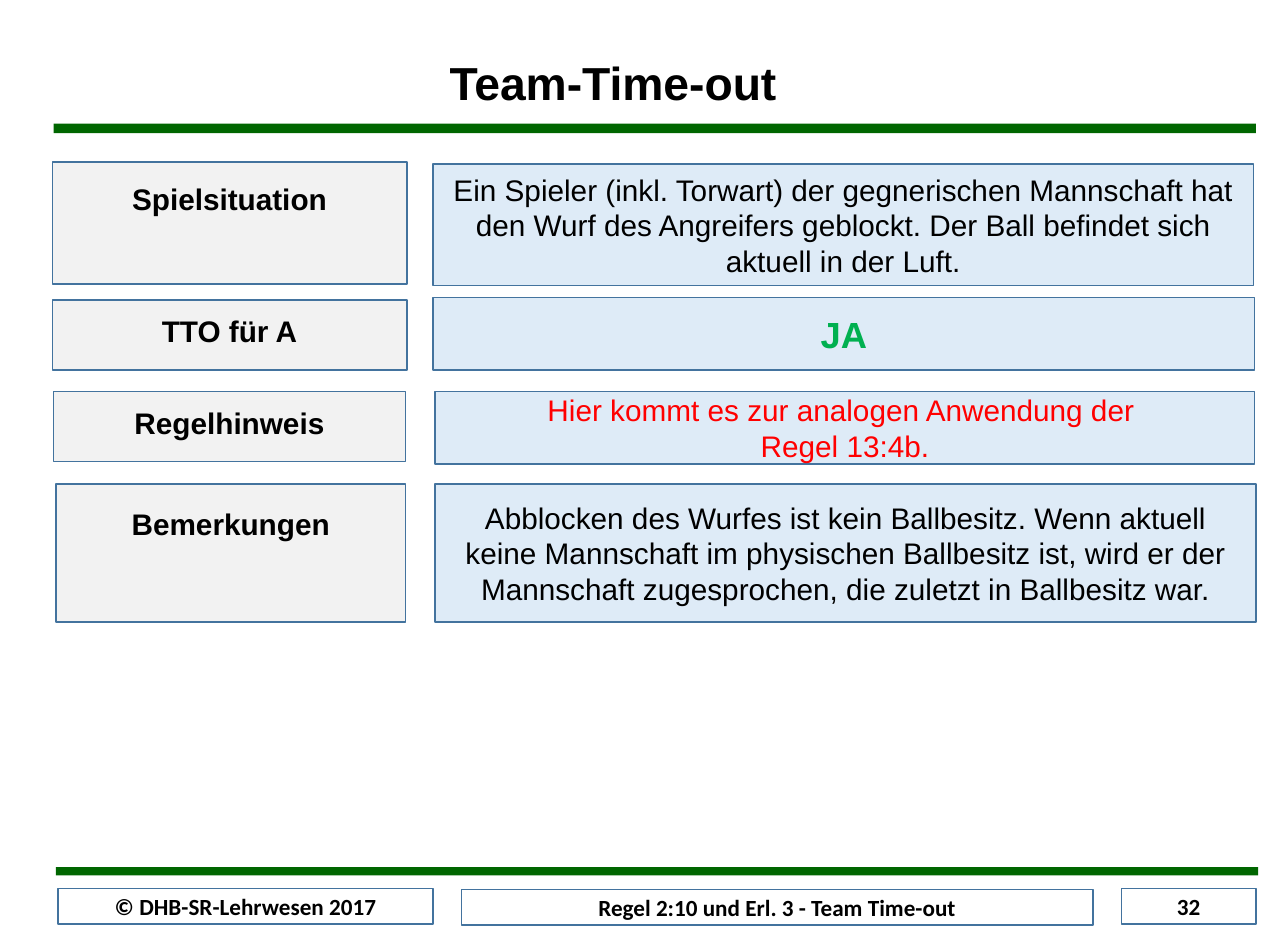
from dataclasses import dataclass

import pptx
import pptx.dml.color
import pptx.enum.shapes
import pptx.enum.text
import pptx.util

PX_PER_INCH = 100
EMU_PER_PX = 914400 // PX_PER_INCH

COLORS = {
    "bar": "006600",
    "border": "43739E",
    "label": "F2F2F2",
    "answer": "DEEBF7",
    "footer": "FFFFFF",
    "text": "000000",
    "yes": "00B050",
    "rule": "FF0000",
}
ANCHOR = pptx.enum.text.MSO_ANCHOR
ALIGN = pptx.enum.text.PP_ALIGN


@dataclass(frozen=True)
class Area:
    left: int
    top: int
    width: int
    height: int


@dataclass(frozen=True)
class Box:
    area: Area
    fill: str
    lines: tuple[str, ...]
    size: int = 18
    font: str = "Arial"
    color: str = "text"
    bold: bool = False
    top_inset: int | None = None


def px(length: int) -> pptx.util.Emu:
    return pptx.util.Emu(length * EMU_PER_PX)


def rgb(name: str) -> pptx.dml.color.RGBColor:
    return pptx.dml.color.RGBColor.from_string(COLORS[name])


def add_rectangle(slide, area: Area, fill: str):
    rectangle = slide.shapes.add_shape(
        pptx.enum.shapes.MSO_SHAPE.RECTANGLE,
        px(area.left), px(area.top), px(area.width), px(area.height),
    )
    rectangle.shadow.inherit = False
    rectangle.fill.solid()
    rectangle.fill.fore_color.rgb = rgb(fill)
    return rectangle


def add_bar(slide, area: Area) -> None:
    bar = add_rectangle(slide, area, "bar")
    bar.line.fill.background()


def style_font(font, name: str, size: int, color: str, bold: bool) -> None:
    font.name = name
    font.size = pptx.util.Pt(size)
    font.bold = bold
    font.color.rgb = rgb(color)


def add_box(slide, box: Box) -> None:
    rectangle = add_rectangle(slide, box.area, box.fill)
    rectangle.line.color.rgb = rgb("border")
    rectangle.line.width = pptx.util.Pt(1)
    frame = rectangle.text_frame
    frame.word_wrap = True
    frame.margin_top = frame.margin_bottom = 0
    frame.vertical_anchor = ANCHOR.MIDDLE
    if box.top_inset is not None:
        frame.vertical_anchor = ANCHOR.TOP
        frame.margin_top = px(box.top_inset)
    paragraph = frame.paragraphs[0]
    paragraph.alignment = ALIGN.CENTER
    for index, line in enumerate(box.lines):
        if index:
            paragraph.add_line_break()
        run = paragraph.add_run()
        run.text = line
        style_font(run.font, box.font, box.size, box.color, box.bold)


def set_title(slide, area: Area, text: str) -> None:
    title = slide.shapes.title
    title.left, title.top = px(area.left), px(area.top)
    title.width, title.height = px(area.width), px(area.height)
    frame = title.text_frame
    frame.auto_size = pptx.enum.text.MSO_AUTO_SIZE.NONE
    frame.word_wrap = False
    frame.vertical_anchor = ANCHOR.TOP
    paragraph = frame.paragraphs[0]
    paragraph.alignment = ALIGN.LEFT
    run = paragraph.add_run()
    run.text = text
    style_font(run.font, "Arial", 28, "text", True)


def label(area: Area, text: str, top_inset: int) -> Box:
    return Box(area, "label", (text,), bold=True, top_inset=top_inset)


def footer(area: Area, text: str) -> Box:
    return Box(area, "footer", (text,), size=14, font="Calibri", bold=True)


BARS = (Area(45, 104, 1011, 8), Area(47, 729, 1011, 7))

LABELS = (
    label(Area(44, 136, 298, 103), "Spielsituation", 16),
    label(Area(44, 252, 298, 59), "TTO für A", 11),
    label(Area(45, 329, 296, 59), "Regelhinweis", 11),
    label(Area(47, 407, 294, 116), "Bemerkungen", 18),
)

ANSWERS = (
    Box(Area(364, 138, 690, 102), "answer", (
        "Ein Spieler (inkl. Torwart) der gegnerischen Mannschaft hat den Wurf "
        "des Angreifers geblockt. Der Ball befindet sich aktuell in der Luft.",
    )),
    Box(Area(364, 250, 691, 61), "answer", ("JA",),
        size=22, color="yes", bold=True),
    Box(Area(366, 329, 689, 61), "answer", (
        "Hier kommt es zur analogen Anwendung der ", "Regel 13:4b.",
    ), color="rule"),
    Box(Area(366, 407, 690, 116), "answer", (
        "Abblocken des Wurfes ist kein Ballbesitz. Wenn aktuell keine "
        "Mannschaft im physischen Ballbesitz ist, wird er der Mannschaft "
        "zugesprochen, die zuletzt in Ballbesitz war.",
    )),
)

FOOTERS = (
    footer(Area(49, 747, 315, 30), "© DHB-SR-Lehrwesen 2017"),
    footer(Area(388, 748, 531, 30), "Regel 2:10 und Erl. 3 - Team Time-out"),
    footer(Area(943, 747, 113, 30), "32"),
)


def main() -> None:
    presentation = pptx.Presentation()
    presentation.slide_width = px(1083)
    presentation.slide_height = px(792)
    slide = presentation.slides.add_slide(presentation.slide_layouts[5])
    set_title(slide, Area(368, 41, 298, 57), "Team-Time-out")
    for bar in BARS:
        add_bar(slide, bar)
    for box in LABELS + ANSWERS + FOOTERS:
        add_box(slide, box)
    presentation.save("out.pptx")


if __name__ == "__main__":
    main()
